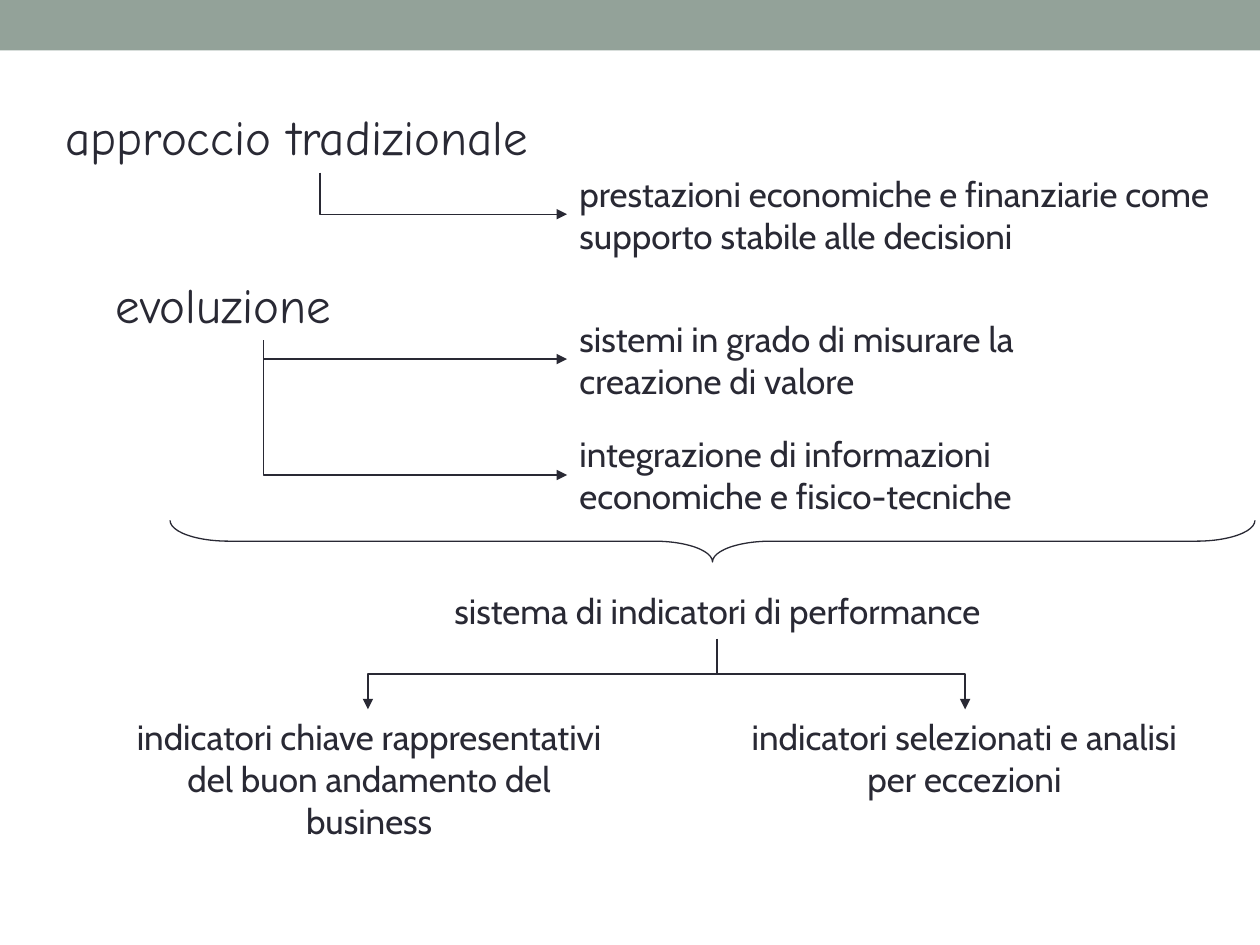
"""Build a slide on how performance indicator systems evolved."""
from lxml import etree
from pptx import Presentation
from pptx import util as u
from pptx.dml.color import RGBColor
from pptx.enum import shapes, text
from pptx.oxml.ns import qn

THEME = {
    "ink": RGBColor.from_string("292934"),
    "bar": RGBColor.from_string("93A299"),
    "heading": ("Comic Neue", 28),
    "body": ("Cabin", 20),
    "line": 0.75,
}
LEFT, CENTER = text.PP_ALIGN.LEFT, text.PP_ALIGN.CENTER
TEXTS = [
    ("approccio tradizionale", "heading", LEFT, (0.42, 0.8, 4.23, 0.57)),
    ("prestazioni economiche e finanziarie come supporto stabile alle decisioni",
     "body", LEFT, (4.5, 1.32, 5.38, 0.77)),
    ("evoluzione", "heading", LEFT, (0.82, 2.13, 2.54, 0.57)),
    ("sistemi in grado di misurare la creazione di valore",
     "body", LEFT, (4.5, 2.47, 4.31, 0.77)),
    ("integrazione di informazioni economiche e fisico-tecniche",
     "body", LEFT, (4.5, 3.38, 4.15, 0.77)),
    ("sistema di indicatori di performance", "body", CENTER, (3.12, 4.63, 5.15, 0.44)),
    ("indicatori chiave rappresentativi del buon andamento del business",
     "body", CENTER, (0.89, 5.63, 4.08, 1.11)),
    ("indicatori selezionati e analisi per eccezioni",
     "body", CENTER, (5.81, 5.63, 3.69, 0.77)),
]
ARROWS = [
    ("bentConnector2", (2.54, 1.37), (4.5, 1.7)),
    ("bentConnector2", (2.09, 2.7), (4.5, 2.85)),
    ("bentConnector2", (2.09, 2.7), (4.5, 3.77)),
    ("bentConnector3", (5.69, 5.07), (2.92, 5.63)),
    ("bentConnector3", (5.69, 5.07), (7.66, 5.63)),
]
BRACE = (5.49, -0.01, 0.33, 8.61)


def inches(values):
    return [u.Inches(value) for value in values]


def style_line(line):
    line.color.rgb = THEME["ink"]
    line.width = u.Pt(THEME["line"])


def add_text(slide, words, role, align, place):
    frame = slide.shapes.add_textbox(*inches(place)).text_frame
    frame.word_wrap = True
    frame.auto_size = text.MSO_AUTO_SIZE.SHAPE_TO_FIT_TEXT
    paragraph = frame.paragraphs[0]
    paragraph.text = words
    paragraph.alignment = align
    name, size = THEME[role]
    paragraph.font.name = name
    paragraph.font.size = u.Pt(size)
    paragraph.font.color.rgb = THEME["ink"]


def add_arrow(slide, preset, start, end):
    """Draw an elbow that leaves its start downwards, as a turned connector."""
    (x1, y1), (x2, y2) = start, end
    half_width, half_height = abs(y2 - y1) / 2, abs(x2 - x1) / 2
    mid_x, mid_y = (x1 + x2) / 2, (y1 + y2) / 2
    arrow = slide.shapes.add_connector(
        shapes.MSO_CONNECTOR.ELBOW,
        *inches((mid_x - half_width, mid_y - half_height,
                 mid_x + half_width, mid_y + half_height)))
    style_line(arrow.line)
    properties = arrow._element.spPr
    frame = properties.find(qn("a:xfrm"))
    if x2 > x1:
        frame.set("rot", "16200000")
        frame.set("flipH", "1")
    else:
        frame.set("rot", "5400000")
    properties.find(qn("a:prstGeom")).set("prst", preset)
    etree.SubElement(properties.find(qn("a:ln")), qn("a:tailEnd"), type="triangle")
    etree.SubElement(properties, qn("a:effectLst"))


def add_plain_shape(slide, kind, place):
    shape = slide.shapes.add_shape(kind, *inches(place))
    shape.shadow.inherit = False
    return shape


def main():
    deck = Presentation()
    deck.slide_width, deck.slide_height = inches((10, 7.5))
    slide = deck.slides.add_slide(deck.slide_layouts[6])

    bar = add_plain_shape(slide, shapes.MSO_SHAPE.RECTANGLE, (0, 0, 10, 0.4))
    bar.fill.solid()
    bar.fill.fore_color.rgb = THEME["bar"]
    bar.line.fill.background()

    for item in TEXTS:
        add_text(slide, *item)
    for arrow in ARROWS:
        add_arrow(slide, *arrow)

    brace = add_plain_shape(slide, shapes.MSO_SHAPE.LEFT_BRACE, BRACE)
    brace.rotation = 270
    brace.adjustments[0] = 1.41
    brace.fill.background()
    style_line(brace.line)

    deck.save("out.pptx")


if __name__ == "__main__":
    main()
